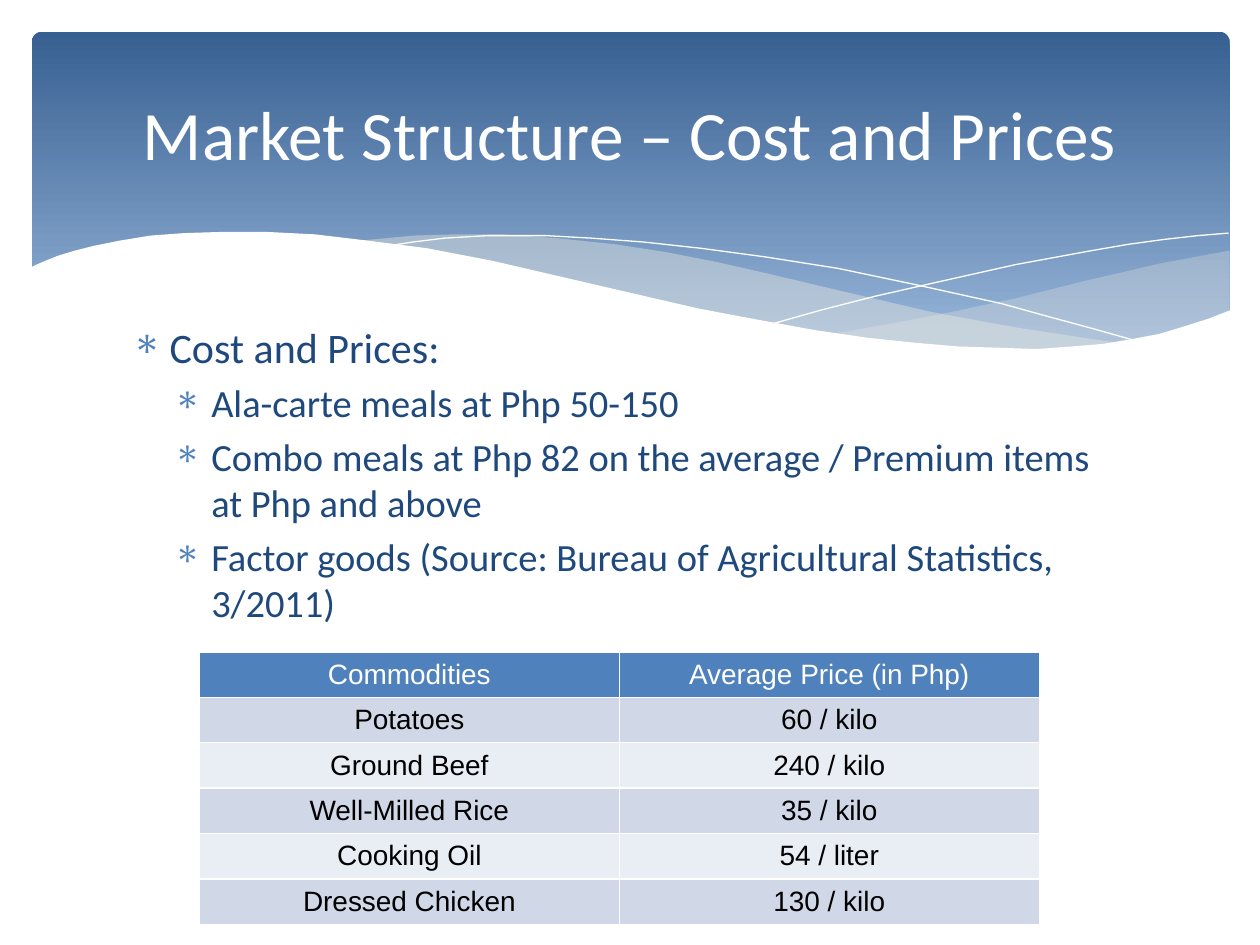
from lxml import etree
from pptx import Presentation
from pptx.dml.color import RGBColor
from pptx.enum.shapes import MSO_SHAPE
from pptx.enum.text import MSO_ANCHOR, PP_ALIGN
from pptx.oxml.ns import qn
from pptx.util import Cm, Pt

ROUNDED = MSO_SHAPE.ROUNDED_RECTANGLE
CENTER, LEFT = PP_ALIGN.CENTER, PP_ALIGN.LEFT
MIDDLE, TOP = MSO_ANCHOR.MIDDLE, MSO_ANCHOR.TOP

COLORS = {
    "white": "FFFFFF", "black": "000000", "deep": "376092", "sky": "95B3D7",
    "sand": "EEECE1", "navy": "1F497D", "accent": "4F81BD",
    "band": "D0D8E8", "pale": "E9EDF4",
}
WAVE_UNIT = Cm(2.54) / 100

RIGHT_WAVE = [
    (975, 199), (948, 204), (921, 209), (891, 216), (861, 223), (805, 237),
    (753, 248), (706, 257), (661, 265), (691, 269), (718, 272), (745, 275),
    (781, 277), (814, 278), (854, 276), (881, 273), (905, 269), (928, 263),
    (949, 257), (963, 252), (976, 247), (976, 199),
]
LONG_WAVE = [
    (893, 273), (866, 269), (807, 260), (741, 248), (668, 231), (613, 218),
    (569, 208), (528, 200), (489, 194), (442, 189), (399, 186), (361, 186),
    (328, 187), (286, 191), (323, 196), (362, 203), (404, 211), (449, 222),
    (530, 240), (601, 255), (650, 264), (695, 270), (736, 275), (773, 277),
    (807, 278), (848, 277), (876, 275),
]
FALLING_LINE = [
    (309, 195), (328, 192), (353, 189), (387, 187), (433, 187), (469, 189),
    (510, 192), (556, 197), (608, 204), (665, 213), (727, 226), (795, 241),
    (831, 251), (868, 261), (907, 272),
]
RISING_LINE = [
    (613, 257), (652, 246), (695, 235), (748, 223), (806, 210), (866, 199),
    (895, 194), (924, 190), (951, 187), (975, 185),
]
WHITE_WAVE = [
    (977, 246), (959, 253), (940, 259), (920, 265), (899, 269), (875, 273),
    (850, 275), (823, 277), (793, 276), (761, 275), (726, 272), (688, 268),
    (647, 262), (603, 254), (555, 245), (503, 233), (447, 220), (391, 207),
    (339, 197), (292, 191), (250, 186), (211, 184), (177, 184), (146, 185),
    (119, 187), (95, 191), (75, 195), (59, 199), (46, 203), (36, 207),
    (29, 210), (23, 213), (23, 329), (977, 329),
]
POINTS = [
    ("Cost and Prices:", 24, 0.76),
    ("Ala-carte meals at Php 50-150", 22, 1.6),
    ("Combo meals at Php 82 on the average / Premium items at Php and above", 22, 1.6),
    ("Factor goods (Source: Bureau of Agricultural Statistics, 3/2011)", 22, 1.6),
]
PRICES = [
    ("Commodities", "Average Price (in Php)"),
    ("Potatoes", "60 / kilo"),
    ("Ground Beef", "240 / kilo"),
    ("Well-Milled Rice", "35 / kilo"),
    ("Cooking Oil", "54 / liter"),
    ("Dressed Chicken", "130 / kilo"),
]


def rgb(name):
    """Return the named colour."""
    return RGBColor.from_string(COLORS[name])


def write(paragraph, text, *, size, color, font="Calibri", align=LEFT):
    """Put formatted text into a paragraph."""
    paragraph.alignment = align
    run = paragraph.add_run()
    run.text = text
    run.font.size = Pt(size)
    run.font.name = font
    run.font.color.rgb = rgb(color)


def add_bullet(paragraph, indent):
    """Give a paragraph an asterisk bullet with a hanging indent."""
    properties = paragraph._p.get_or_add_pPr()
    properties.set("marL", str(Cm(indent)))
    properties.set("indent", str(-Cm(0.76)))
    bullet_color = etree.SubElement(properties, qn("a:buClr"))
    etree.SubElement(bullet_color, qn("a:srgbClr"), val=COLORS["accent"])
    etree.SubElement(properties, qn("a:buChar"), char="∗")


def add_borders(cell):
    """Draw thin white borders around a table cell."""
    properties = cell._tc.get_or_add_tcPr()
    for side in ("lnL", "lnR", "lnT", "lnB"):
        border = etree.SubElement(properties, qn(f"a:{side}"), w=str(Pt(1)))
        fill = etree.SubElement(border, qn("a:solidFill"))
        etree.SubElement(fill, qn("a:srgbClr"), val=COLORS["white"])


class WaveSlide:
    """Holds the style and the current slide."""

    def __init__(self, slide):
        """Keep the slide to draw on."""
        self.slide = slide
        self.shapes = slide.shapes

    def banner(self, left, top, width, height):
        """Add the rounded gradient banner."""
        banner = self.shapes.add_shape(ROUNDED, Cm(left), Cm(top), Cm(width), Cm(height))
        banner.adjustments[0] = 0.03
        banner.shadow.inherit = False
        banner.line.fill.background()
        banner.fill.gradient()
        banner.fill.gradient_angle = 270
        for stop, (position, color) in zip(
            banner.fill.gradient_stops, [(0, "deep"), (0.9, "sky")]
        ):
            stop.position = position
            stop.color.rgb = rgb(color)

    def outline(self, points, closed):
        """Add a bare freeform through the points."""
        builder = self.shapes.build_freeform(*points[0], scale=WAVE_UNIT)
        builder.add_line_segments(points[1:], close=closed)
        outline = builder.convert_to_shape()
        outline.shadow.inherit = False
        return outline

    def wave(self, points, color, opacity=100):
        """Add a filled wave."""
        wave = self.outline(points, True)
        wave.line.fill.background()
        wave.fill.solid()
        wave.fill.fore_color.rgb = rgb(color)
        if opacity < 100:
            tint = wave.fill._xPr.find(qn("a:solidFill"))[0]
            etree.SubElement(tint, qn("a:alpha"), val=str(opacity * 1000))

    def hairline(self, points):
        """Add a thin white curve."""
        curve = self.outline(points, False)
        curve.fill.background()
        curve.line.color.rgb = rgb("white")
        curve.line.width = Pt(0)

    def text_frame(self, left, top, width, height, anchor=TOP):
        """Add a wrapping text box and return its frame."""
        frame = self.shapes.add_textbox(Cm(left), Cm(top), Cm(width), Cm(height)).text_frame
        frame.word_wrap = True
        frame.vertical_anchor = anchor
        return frame

    def title(self, text):
        """Add the slide title."""
        frame = self.text_frame(1.27, 0.94, 22.86, 3.48, MIDDLE)
        write(frame.paragraphs[0], text, size=39.6, color="white", align=CENTER)

    def bullets(self, points):
        """Add the bulleted points."""
        frame = self.text_frame(2.41, 6.35, 20.57, 9.58)
        for index, (text, size, indent) in enumerate(points):
            paragraph = frame.add_paragraph() if index else frame.paragraphs[0]
            paragraph.space_before = Pt(size * 0.2)
            add_bullet(paragraph, indent)
            write(paragraph, text, size=size, color="navy")

    def price_table(self, prices):
        """Add the banded price table."""
        table = self.shapes.add_table(
            len(prices), len(prices[0]), Cm(4.02), Cm(13.14), Cm(16.93), Cm(5.5)
        ).table
        for row, entries in enumerate(prices):
            band = "band" if row % 2 else "pale"
            for column, text in enumerate(entries):
                cell = table.cell(row, column)
                add_borders(cell)
                cell.fill.solid()
                cell.fill.fore_color.rgb = rgb(band if row else "accent")
                cell.vertical_anchor = MIDDLE
                cell.margin_left = cell.margin_right = Cm(0.18)
                cell.margin_top = cell.margin_bottom = 0
                write(cell.text_frame.paragraphs[0], text, size=16, font="Arial",
                      color="black" if row else "white", align=CENTER)


def main():
    """Build and save the presentation."""
    deck = Presentation()
    deck.slide_width, deck.slide_height = Cm(25.4), Cm(19.05)
    market = WaveSlide(deck.slides.add_slide(deck.slide_layouts[6]))
    market.banner(0.64, 0.64, 24.15, 6.86)
    market.wave(RIGHT_WAVE, "sand", 29)
    market.wave(LONG_WAVE, "sand", 40)
    market.hairline(FALLING_LINE)
    market.hairline(RISING_LINE)
    market.wave(WHITE_WAVE, "white")
    market.bullets(POINTS)
    market.title("Market Structure – Cost and Prices")
    market.price_table(PRICES)
    deck.save("out.pptx")


if __name__ == "__main__":
    main()
